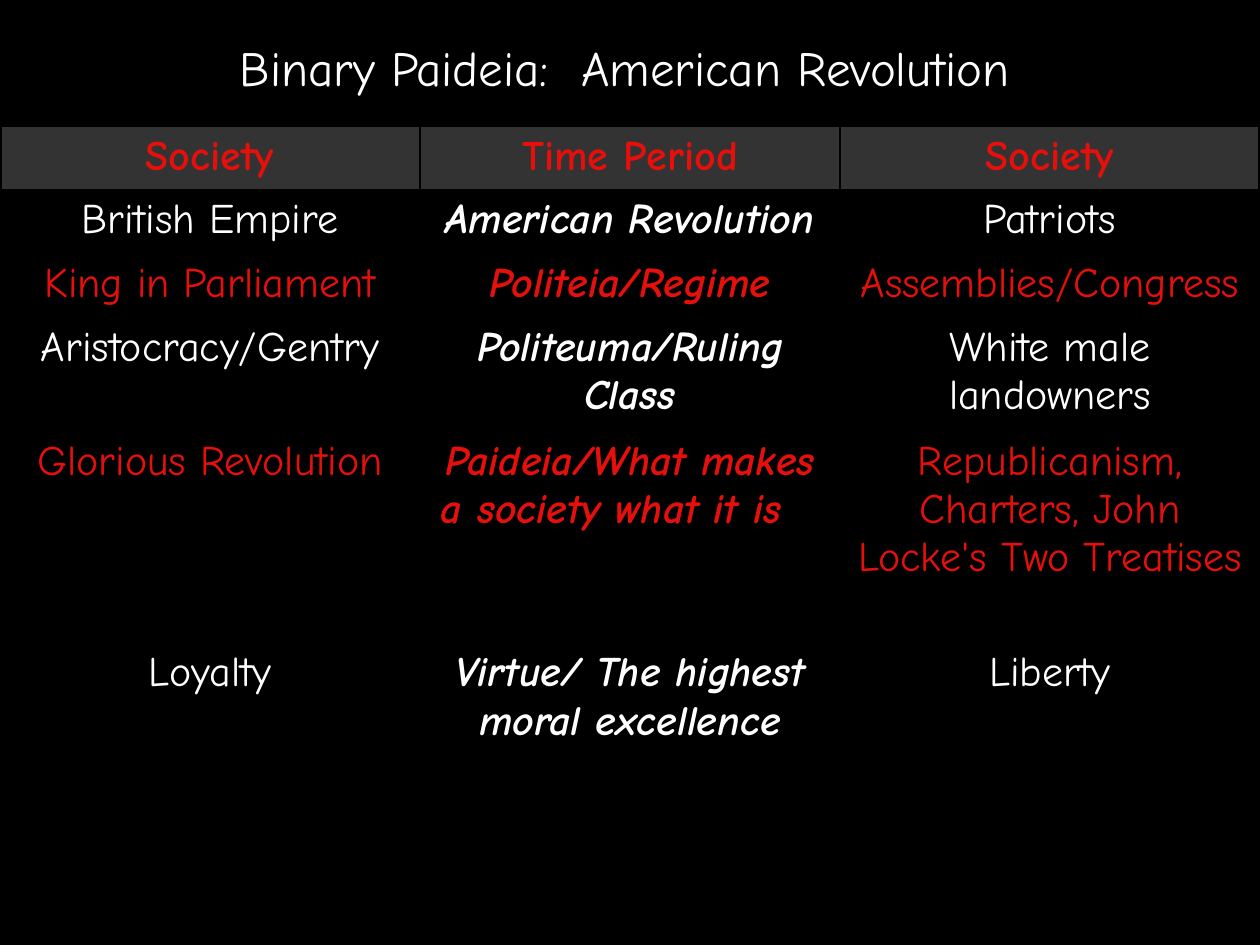
from dataclasses import dataclass

import lxml.etree
import pptx
import pptx.dml.color
import pptx.enum.text
import pptx.oxml.ns
import pptx.util

Pt = pptx.util.Pt
FONT = "Comic Neue"
BLACK, GREY, RED, WHITE = "000000", "333333", "E5100B", "FFFFFF"
OUTER_BORDER, INNER_BORDER = 2.25, 1


@dataclass
class Comparison:
    left_society: str
    topic: str
    right_society: str
    height: float


COMPARISONS = [
    Comparison("Society", "Time Period", "Society", 36.5),
    Comparison("British Empire", "American Revolution", "Patriots", 36.5),
    Comparison("King in Parliament", "Politeia/Regime", "Assemblies/Congress", 36.5),
    Comparison("Aristocracy/Gentry", "Politeuma/Ruling Class", "White male landowners", 64.8),
    Comparison("Glorious Revolution", "Paideia/What makes a society what it is\t",
               "Republicanism, Charters, John Locke's Two Treatises", 121),
    Comparison("Loyalty", "Virtue/ The highest moral excellence", "Liberty", 64.8),
]


def rgb(color: str) -> pptx.dml.color.RGBColor:
    return pptx.dml.color.RGBColor.from_string(color)


def write(frame, text: str, *, size: float, color: str,
          bold: bool = False, italic: bool = False) -> None:
    paragraph = frame.paragraphs[0]
    paragraph.alignment = pptx.enum.text.PP_ALIGN.CENTER
    run = paragraph.add_run()
    run.text = text
    run.font.name = FONT
    run.font.size = Pt(size)
    run.font.bold = bold
    run.font.italic = italic
    run.font.color.rgb = rgb(color)


def set_borders(cell, widths: dict[str, float]) -> None:
    """Draw black cell borders; the sides must come in the order L, R, T, B."""
    properties = cell._tc.get_or_add_tcPr()
    qn = pptx.oxml.ns.qn
    for side, width in widths.items():
        line = lxml.etree.SubElement(properties, qn(f"a:ln{side}"), w=str(int(Pt(width))))
        fill = lxml.etree.SubElement(line, qn("a:solidFill"))
        lxml.etree.SubElement(fill, qn("a:srgbClr"), val=BLACK)


def add_comparison_table(slide, comparisons: list[Comparison]) -> None:
    total = sum(comparison.height for comparison in comparisons)
    table = slide.shapes.add_table(len(comparisons), 3, Pt(0), Pt(72), Pt(720), Pt(total)).table
    table.first_row = table.horz_banding = False
    last = len(comparisons) - 1
    for column in table.columns:
        column.width = Pt(240)
    for i, comparison in enumerate(comparisons):
        table.rows[i].height = Pt(comparison.height)
        texts = (comparison.left_society, comparison.topic, comparison.right_society)
        for j, text in enumerate(texts):
            cell = table.cell(i, j)
            header, middle = i == 0, j == 1
            write(cell.text_frame, text, size=24, color=WHITE if i % 2 else RED,
                  bold=header or middle, italic=middle and not header)
            set_borders(cell, {
                "L": OUTER_BORDER if j == 0 else INNER_BORDER,
                "R": OUTER_BORDER if j == 2 else INNER_BORDER,
                "T": INNER_BORDER,
                "B": OUTER_BORDER if i == last else INNER_BORDER,
            })
            if header:
                cell.fill.solid()
                cell.fill.fore_color.rgb = rgb(GREY)
            else:
                cell.fill.background()


def main() -> None:
    presentation = pptx.Presentation()
    presentation.slide_width, presentation.slide_height = Pt(720), Pt(540)
    slide = presentation.slides.add_slide(presentation.slide_layouts[5])
    slide.background.fill.solid()
    slide.background.fill.fore_color.rgb = rgb(BLACK)

    add_comparison_table(slide, COMPARISONS)

    title = slide.shapes.title
    title.left, title.top, title.width, title.height = Pt(60), Pt(18), Pt(594), Pt(41)
    title.text_frame.word_wrap = True
    title.text_frame.vertical_anchor = pptx.enum.text.MSO_ANCHOR.TOP
    write(title.text_frame, "Binary Paideia:  American Revolution", size=28, color=WHITE)

    presentation.save("out.pptx")


if __name__ == "__main__":
    main()
